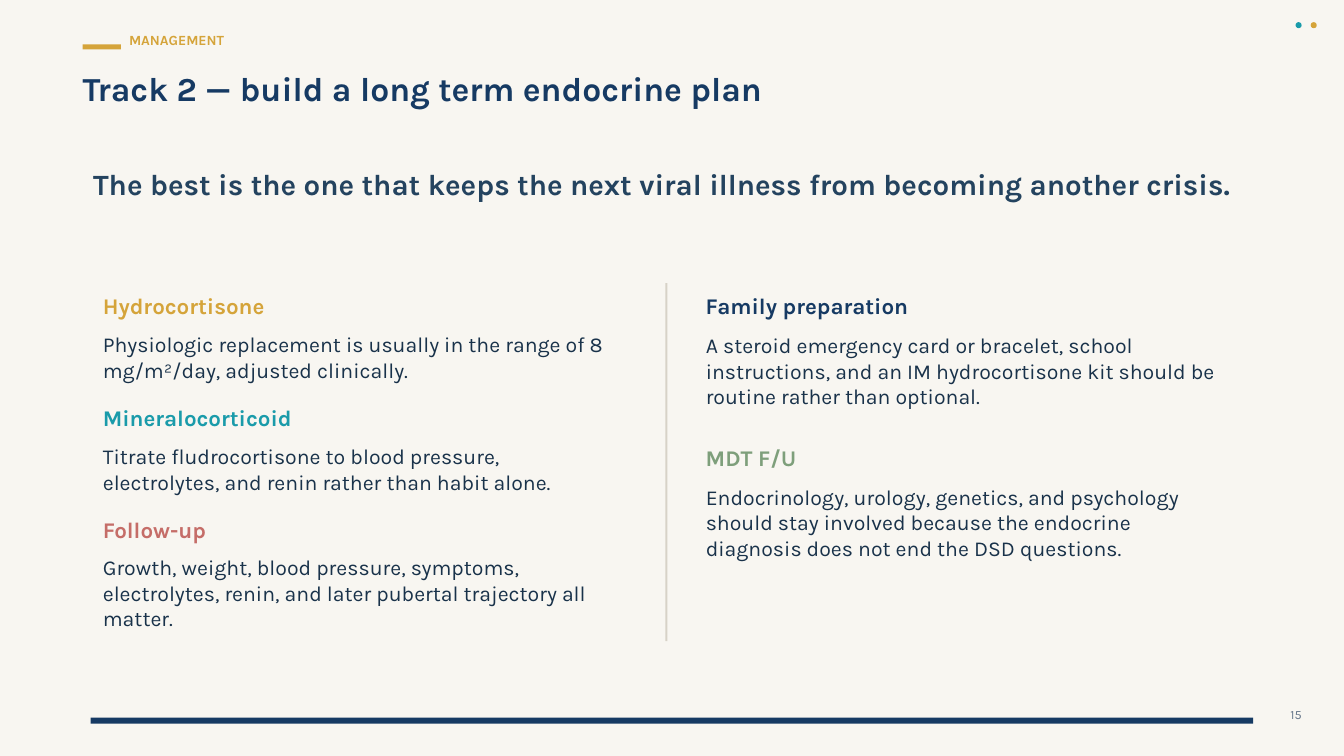
"""Build the endocrine plan slide."""
from pptx import Presentation
from pptx.dml.color import RGBColor
from pptx.enum.shapes import MSO_SHAPE
from pptx.enum.text import MSO_ANCHOR, PP_ALIGN
from pptx.util import Inches, Pt

RECTANGLE, OVAL = MSO_SHAPE.RECTANGLE, MSO_SHAPE.OVAL
MIDDLE = MSO_ANCHOR.MIDDLE
LEFT, CENTER, RIGHT = PP_ALIGN.LEFT, PP_ALIGN.CENTER, PP_ALIGN.RIGHT

CREAM = RGBColor(0xF8, 0xF6, 0xF1)
NAVY = RGBColor(0x16, 0x3A, 0x63)
SLATE = RGBColor(0x24, 0x43, 0x5F)
INK = RGBColor(0x19, 0x32, 0x4A)
GOLD = RGBColor(0xD5, 0xA4, 0x3A)
TEAL = RGBColor(0x1A, 0x9B, 0xAA)
ROSE = RGBColor(0xC5, 0x6D, 0x68)
SAGE = RGBColor(0x7E, 0x9F, 0x7B)
SAND = RGBColor(0xD7, 0xD2, 0xC7)
GRAY = RGBColor(0x66, 0x76, 0x8A)

FONT = "Karla"

TREATMENT = [
    ("Hydrocortisone", GOLD, 0.41,
     "Physiologic replacement is usually in the range of 8 mg/m²/day, adjusted clinically."),
    ("Mineralocorticoid", TEAL, 0.41,
     "Titrate fludrocortisone to blood pressure, electrolytes, and renin rather than habit alone."),
    ("Follow-up", ROSE, 0.53,
     "Growth, weight, blood pressure, symptoms, electrolytes, renin, "
     "and later pubertal trajectory all matter."),
]
SUPPORT = [
    ("Family preparation", NAVY, 0.45,
     "A steroid emergency card or bracelet, school instructions, and an IM "
     "hydrocortisone kit should be routine rather than optional."),
    ("MDT F/U", SAGE, 0.44,
     "Endocrinology, urology, genetics, and psychology should stay involved because "
     "the endocrine diagnosis does not end the DSD questions."),
]


def add_block(slide, left, top, width, height, color, preset=RECTANGLE):
    """Draw a solid shape without outline or shadow."""
    block = slide.shapes.add_shape(
        preset, Inches(left), Inches(top), Inches(width), Inches(height))
    block.fill.solid()
    block.fill.fore_color.rgb = color
    block.line.fill.background()
    block.shadow.inherit = False


def add_text(slide, left, top, width, height, text, size, color, bold=False, align=LEFT):
    """Write one paragraph in a box without margins, centred vertically."""
    box = slide.shapes.add_textbox(Inches(left), Inches(top), Inches(width), Inches(height))
    frame = box.text_frame
    frame.word_wrap = True
    frame.vertical_anchor = MIDDLE
    frame.margin_left = frame.margin_right = frame.margin_top = frame.margin_bottom = 0
    paragraph = frame.paragraphs[0]
    paragraph.text = text
    paragraph.alignment = align
    font = paragraph.font
    font.name, font.size, font.bold = FONT, Pt(size), bold
    font.color.rgb = color


def add_header(slide, left, top, width):
    """Place the section label, the title and the corner dots."""
    for index, color in enumerate((TEAL, GOLD)):
        add_block(slide, left + 12.03 + 0.15 * index, top - 0.06, 0.06, 0.06, color, OVAL)
    add_block(slide, left, top + 0.16, 0.38, 0.05, GOLD)
    add_text(slide, left + 0.46, top, 2.8, 0.24, "MANAGEMENT", 10, GOLD, True)
    add_text(slide, left, top + 0.34, width, 0.5,
             "Track 2 — build a long term endocrine plan", 24, NAVY, True)


def add_column(slide, left, top, width, pitch, body_height, topics):
    """Stack headed topics at an equal pitch."""
    for index, (heading, color, body_drop, body) in enumerate(topics):
        heading_top = top + pitch * index
        add_text(slide, left, heading_top, 2.4, 0.22, heading, 16, color, True)
        add_text(slide, left, heading_top + body_drop, width, body_height, body, 15.2, INK)


def add_footer(slide, left, top, width):
    """Place the bottom rule and the page number."""
    add_block(slide, left, top + 0.12, width, 0.06, NAVY)
    add_text(slide, left + width + 0.13, top, 0.35, 0.18, "15", 9, GRAY, align=RIGHT)


def main():
    """Compose the slide and save it."""
    presentation = Presentation()
    presentation.slide_width = Inches(13.33)
    presentation.slide_height = Inches(7.5)
    slide = presentation.slides.add_slide(presentation.slide_layouts[6])
    slide.background.fill.solid()
    slide.background.fill.fore_color.rgb = CREAM

    add_header(slide, 0.82, 0.28, 11.2)
    add_text(slide, 0.81, 1.58, 11.51, 0.48,
             "The best is the one that keeps the next viral illness from becoming another crisis.",
             21, SLATE, True, CENTER)
    add_column(slide, 1.02, 2.92, 5.15, 1.11, 0.42, TREATMENT)
    add_block(slide, 6.6, 2.81, 0.02, 3.55, SAND)
    add_column(slide, 7, 2.92, 5.15, 1.51, 0.62, SUPPORT)
    add_footer(slide, 0.9, 7, 11.53)
    presentation.save("out.pptx")


if __name__ == "__main__":
    main()
